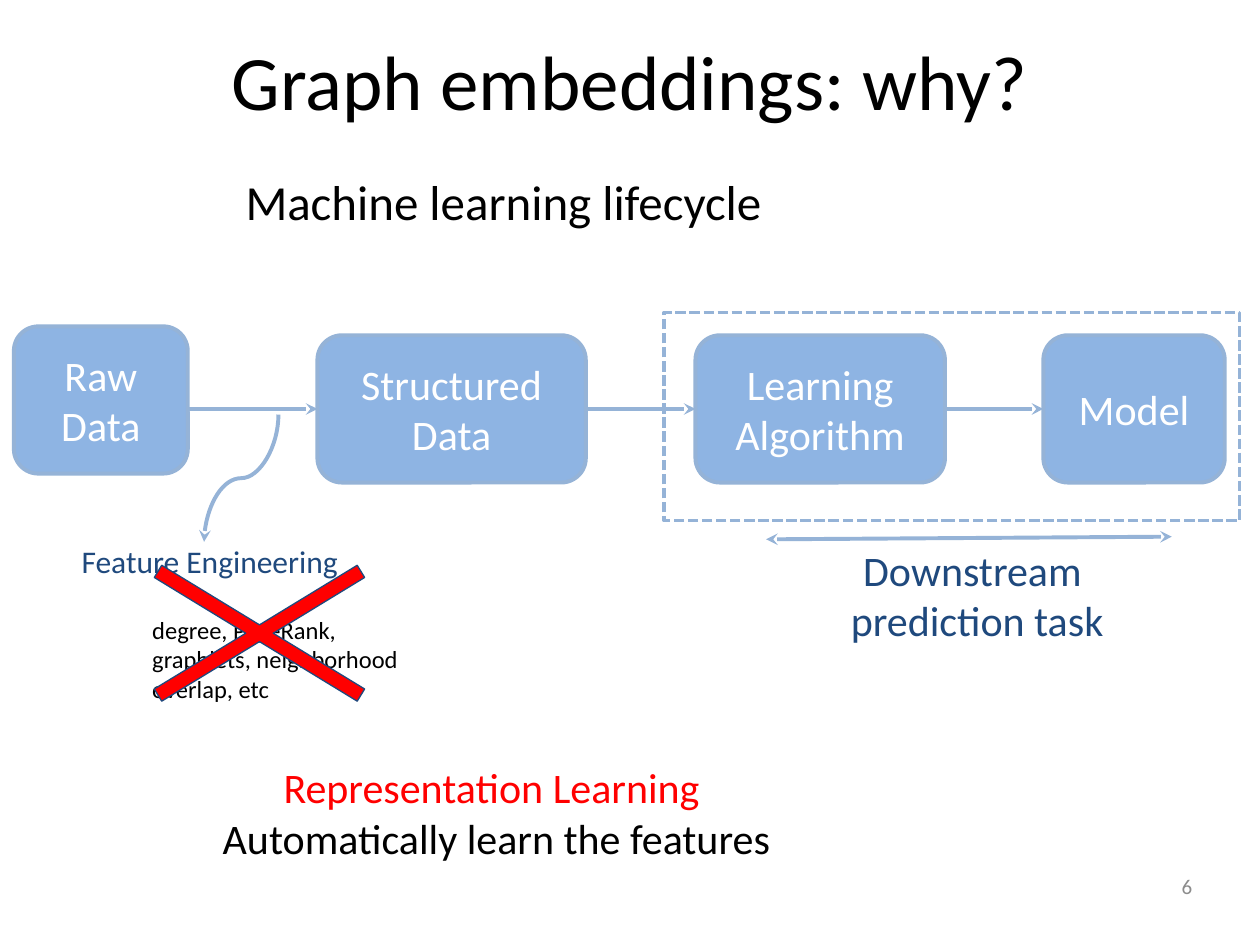
from lxml import etree
from pptx import Presentation
from pptx.dml.color import RGBColor
from pptx.enum.dml import MSO_LINE
from pptx.enum.shapes import MSO_CONNECTOR, MSO_SHAPE
from pptx.enum.text import MSO_ANCHOR, PP_ALIGN
from pptx.oxml.ns import qn
from pptx.util import Pt

STRAIGHT, CURVE = MSO_CONNECTOR.STRAIGHT, MSO_CONNECTOR.CURVE
ROUNDED, RECTANGLE = MSO_SHAPE.ROUNDED_RECTANGLE, MSO_SHAPE.RECTANGLE
CROSS = MSO_SHAPE.MATH_MULTIPLY
DASHED = MSO_LINE.SQUARE_DOT
TOP, MIDDLE = MSO_ANCHOR.TOP, MSO_ANCHOR.MIDDLE
LEFT, CENTER, RIGHT = PP_ALIGN.LEFT, PP_ALIGN.CENTER, PP_ALIGN.RIGHT
LEFT_SIDE, RIGHT_SIDE = 1, 3

FONT = "Calibri"
COLORS = {
    "black": "000000",
    "white": "FFFFFF",
    "gray": "8C8C8C",
    "navy": "1F497D",
    "red": "FF0000",
    "step": "8EB4E3",
    "line": "95B3D7",
}
DEFAULT_INSETS = (7.2, 3.6, 7.2, 3.6)
WIDE_INSETS = (7.2, 7.2, 7.2, 7.2)


def color(name):
    return RGBColor.from_string(COLORS[name])


def points(values):
    return [Pt(value) for value in values]


def set_frame(shape, insets, anchor):
    frame = shape.text_frame
    frame.word_wrap = True
    frame.vertical_anchor = anchor
    (frame.margin_left, frame.margin_top,
     frame.margin_right, frame.margin_bottom) = points(insets)
    return frame


def add_span(para, text, size, ink):
    span = para.add_run()
    span.text = text
    span.font.name = FONT
    span.font.size = Pt(size)
    span.font.color.rgb = color(ink)


def add_text(page, area, lines, size, ink, align=CENTER,
             insets=DEFAULT_INSETS, anchor=TOP):
    box = page.shapes.add_textbox(*points(area))
    para = set_frame(box, insets, anchor).paragraphs[0]
    para.alignment = align
    for index, line in enumerate(lines):
        if index:
            para.add_line_break()
        add_span(para, line, size, ink)
    return box


def add_outlined(page, kind, area, fill, line, width):
    shape = page.shapes.add_shape(kind, *points(area))
    shape.shadow.inherit = False
    if fill:
        shape.fill.solid()
        shape.fill.fore_color.rgb = color(fill)
    else:
        shape.fill.background()
    shape.line.color.rgb = color(line)
    shape.line.width = Pt(width)
    return shape


def add_step(page, area, label):
    step = add_outlined(page, ROUNDED, area, "step", "line", 2.25)
    para = set_frame(step, WIDE_INSETS, MIDDLE).paragraphs[0]
    para.alignment = CENTER
    add_span(para, label, 24, "white")
    return step


def add_arrow(page, start, end, kind=STRAIGHT, ends=("tailEnd",)):
    arrow = page.shapes.add_connector(kind, *points(start + end))
    arrow.line.color.rgb = color("line")
    arrow.line.width = Pt(2.25)
    outline = arrow.line._get_or_add_ln()
    for name in ends:
        etree.SubElement(outline, qn(f"a:{name}"), type="stealth")
    etree.SubElement(arrow._element.spPr, qn("a:effectLst"))
    return arrow


def add_curve_down(page, start, end):
    arrow = add_arrow(page, start, end, CURVE)
    width, height = end[1] - start[1], start[0] - end[0]
    center_x, center_y = (start[0] + end[0]) / 2, (start[1] + end[1]) / 2
    frame = arrow._element.spPr.find(qn("a:xfrm"))
    frame.attrib.clear()
    frame.set("rot", "5400000")
    arrow.left, arrow.top = Pt(center_x - width / 2), Pt(center_y - height / 2)
    arrow.width, arrow.height = Pt(width), Pt(height)


def add_lifecycle(page):
    middle = 233.7
    add_step(page, (7.9, 186.5, 99.4, 84.2), "Raw Data")
    steps = [
        add_step(page, (left, 191.6, width, 84.2), label)
        for left, width, label in (
            (181.4, 153.4, "Structured Data"),
            (397.4, 142.6, "Learning Algorithm"),
            (596.2, 103.7, "Model"),
        )
    ]
    first = add_arrow(page, (108, middle), (181.4, middle))
    first.end_connect(steps[0], LEFT_SIDE)
    for source, target in zip(steps, steps[1:]):
        arrow = add_arrow(page, (0, middle), (1, middle))
        arrow.begin_connect(source, RIGHT_SIDE)
        arrow.end_connect(target, LEFT_SIDE)
    add_curve_down(page, (159.1, 236.9), (116.6, 309.6))


def add_downstream(page):
    add_arrow(page, (437.8, 308.2), (669.6, 306.7), ends=("headEnd", "tailEnd"))
    add_text(page, (430.6, 303.8, 255.6, 84.2),
             ["Downstream ", "prediction task"], 24, "navy", insets=WIDE_INSETS)
    border = add_outlined(page, RECTANGLE, (379.4, 178.6, 329, 118.8),
                          None, "line", 2)
    border.line.dash_style = DASHED


def add_features(page):
    add_text(page, (10.1, 302.4, 219.6, 74.2), ["Feature Engineering"],
             18, "navy", insets=WIDE_INSETS)
    add_text(page, (79.9, 347.8, 169.2, 58.3),
             ["degree, PageRank, graphlets, neighborhood overlap, etc"],
             14, "black", LEFT)
    cross = add_outlined(page, CROSS, (36.7, 293.8, 223.2, 136.1),
                         "red", "navy", 0.75)
    cross.adjustments[0] = 0.06


def add_conclusion(page):
    box = add_text(page, (31.7, 434.2, 504, 58.3),
                   ["Representation Learning "], 24, "red",
                   insets=(0, 0.7, 0, 0))
    box.text_frame.paragraphs[0].space_before = Pt(1)
    para = box.text_frame.add_paragraph()
    para.alignment = CENTER
    para.line_spacing = 1.01
    for text in ("Automatically ", "learn the ", "features"):
        add_span(para, text, 24, "black")


def main():
    deck = Presentation()
    deck.slide_width, deck.slide_height = Pt(720), Pt(540)
    page = deck.slides.add_slide(deck.slide_layouts[6])
    add_text(page, (520.6, 491.8, 167.8, 28.8), ["6"], 12, "gray", RIGHT,
             anchor=MIDDLE)
    add_text(page, (36, 15.8, 648, 90), ["Graph embeddings: why?"], 44, "black")
    add_text(page, (133.2, 94.3, 478.8, 41), ["Machine learning lifecycle"],
             28, "black", LEFT)
    add_lifecycle(page)
    add_downstream(page)
    add_features(page)
    add_conclusion(page)
    deck.save("out.pptx")


if __name__ == "__main__":
    main()
